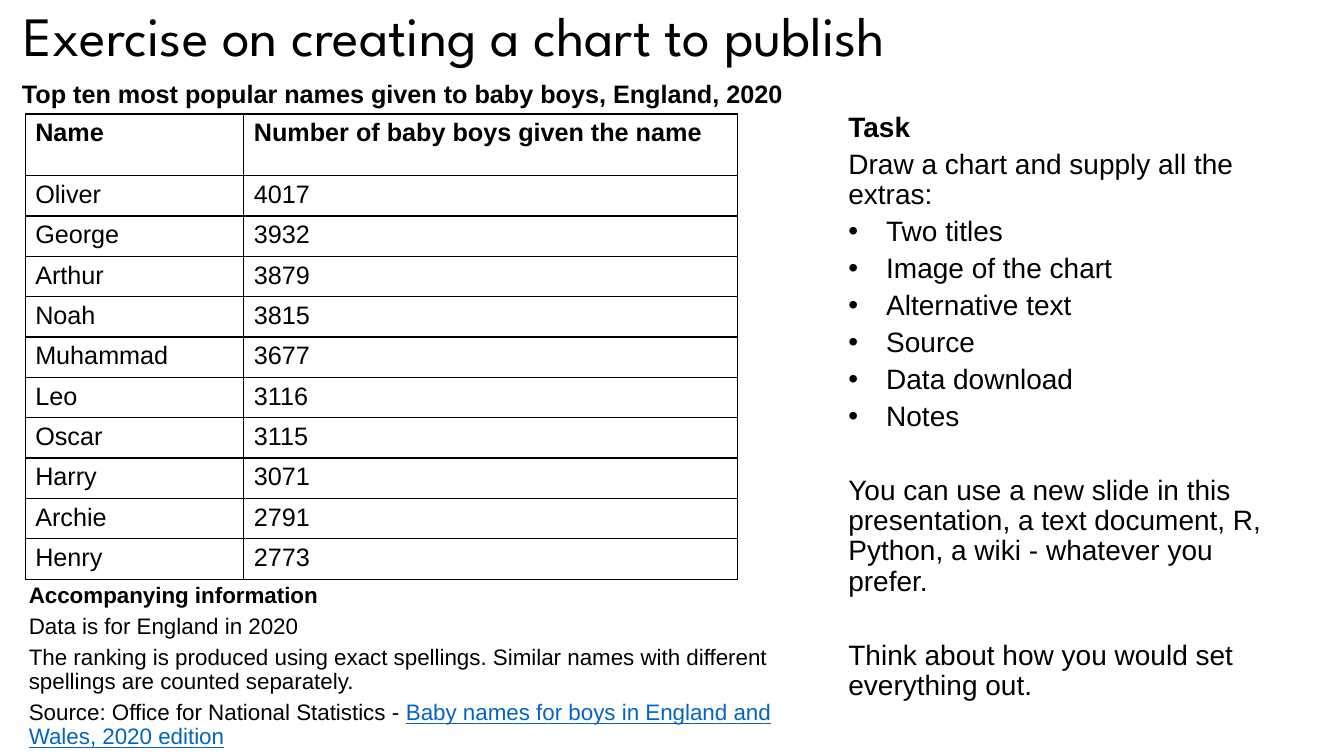
from lxml.etree import SubElement as Sub
from pptx import Presentation
from pptx.dml.color import RGBColor as Rgb
from pptx.enum.text import MSO_ANCHOR as Anchor
from pptx.oxml.ns import qn
from pptx.util import Pt

COLORS = {"ink": "000000", "link": "0563C1"}

deck = Presentation()
deck.slide_width, deck.slide_height = Pt(960), Pt(540)
slide = deck.slides.add_slide(deck.slide_layouts[6])


def write(par, text, size=18, bold=False, color="ink", under=None, face="Arial"):
    run = par.add_run()
    run.text = text
    font = run.font
    font.name, font.size, font.bold, font.underline = face, Pt(size), bold, under
    font.color.rgb = Rgb.from_string(COLORS[color])


def add_box(left, top, width, height, inset=True, wrap=True, anchor=Anchor.TOP):
    frame = slide.shapes.add_textbox(Pt(left), Pt(top), Pt(width), Pt(height)).text_frame
    frame.word_wrap, frame.vertical_anchor = wrap, anchor
    if not inset:
        frame.margin_left = frame.margin_right = Pt(0)
        frame.margin_top = frame.margin_bottom = Pt(0)
    return frame


title = add_box(10, -10, 803.5, 75.5, anchor=Anchor.MIDDLE).paragraphs[0]
title.line_spacing = 0.9
write(title, "Exercise on creating a chart to publish", size=39.6, face="League Spartan")

head = add_box(8.6, 52.5, 564, 29, wrap=False).paragraphs[0]
write(head, "Top ten most popular names given to baby boys, England, 2020", bold=True)

names = [
    ("Name", "Number of baby boys given the name"),
    ("Oliver", 4017), ("George", 3932), ("Arthur", 3879), ("Noah", 3815),
    ("Muhammad", 3677), ("Leo", 3116), ("Oscar", 3115), ("Harry", 3071),
    ("Archie", 2791), ("Henry", 2773),
]
table = slide.shapes.add_table(len(names), 2, Pt(18), Pt(81.4), Pt(509), Pt(332)).table
table.first_row = table.horz_banding = False
table.columns[0].width, table.columns[1].width = Pt(156.2), Pt(352.8)
for r, row in enumerate(names):
    table.rows[r].height = Pt(28.8 if r else 44)
    for c, value in enumerate(row):
        cell = table.cell(r, c)
        write(cell.text_frame.paragraphs[0], str(value), bold=r == 0)
        props = cell._tc.get_or_add_tcPr()
        for side in ("a:lnL", "a:lnR", "a:lnT", "a:lnB"):
            line = Sub(props, qn(side), w=str(Pt(1)))
            Sub(Sub(line, qn("a:solidFill")), qn("a:srgbClr"), val=COLORS["ink"])
        cell.fill.background()

task = [
    ("Task", "head"),
    ("Draw a chart and supply all the extras:", "body"),
    ("Two titles", "item"),
    ("Image of the chart", "item"),
    ("Alternative text", "item"),
    ("Source", "item"),
    ("Data download", "item"),
    ("Notes", "item"),
    ("You can use a new slide in this presentation, a text document, R, "
     "Python, a wiki - whatever you prefer.", "part"),
    ("Think about how you would set everything out.", "part"),
]
info = [
    ("Accompanying information", "head"),
    ("Data is for England in 2020", "body"),
    ("The ranking is produced using exact spellings. Similar names with "
     "different spellings are counted separately.", "body"),
    ("Source: Office for National Statistics - ", "body"),
]
right = add_box(576, 39, 349, 504, inset=False, anchor=Anchor.MIDDLE)
below = add_box(-9.4, 417.6, 563, 146, inset=False)
for frame, lines, size in ((right, task, 20), (below, info, 16)):
    for i, (text, kind) in enumerate(lines):
        par = frame.add_paragraph() if i else frame.paragraphs[0]
        par.line_spacing = 0.9
        par.space_before = Pt(0 if i == 0 else 31.2 if kind == "part" else 4.8)
        props = par._p.get_or_add_pPr()
        props.set("marL", str(Pt(57 if kind == "item" else 30)))
        props.set("indent", str(Pt(-27 if kind == "item" else 0)))
        if kind == "item":
            Sub(props, qn("a:buFont"), typeface="Arial")
            Sub(props, qn("a:buChar"), char="•")
        write(par, text, size=size, bold=kind == "head")
write(par, "Baby names for boys in England and Wales, 2020 edition",
      size=16, color="link", under=True)

deck.save("out.pptx")
